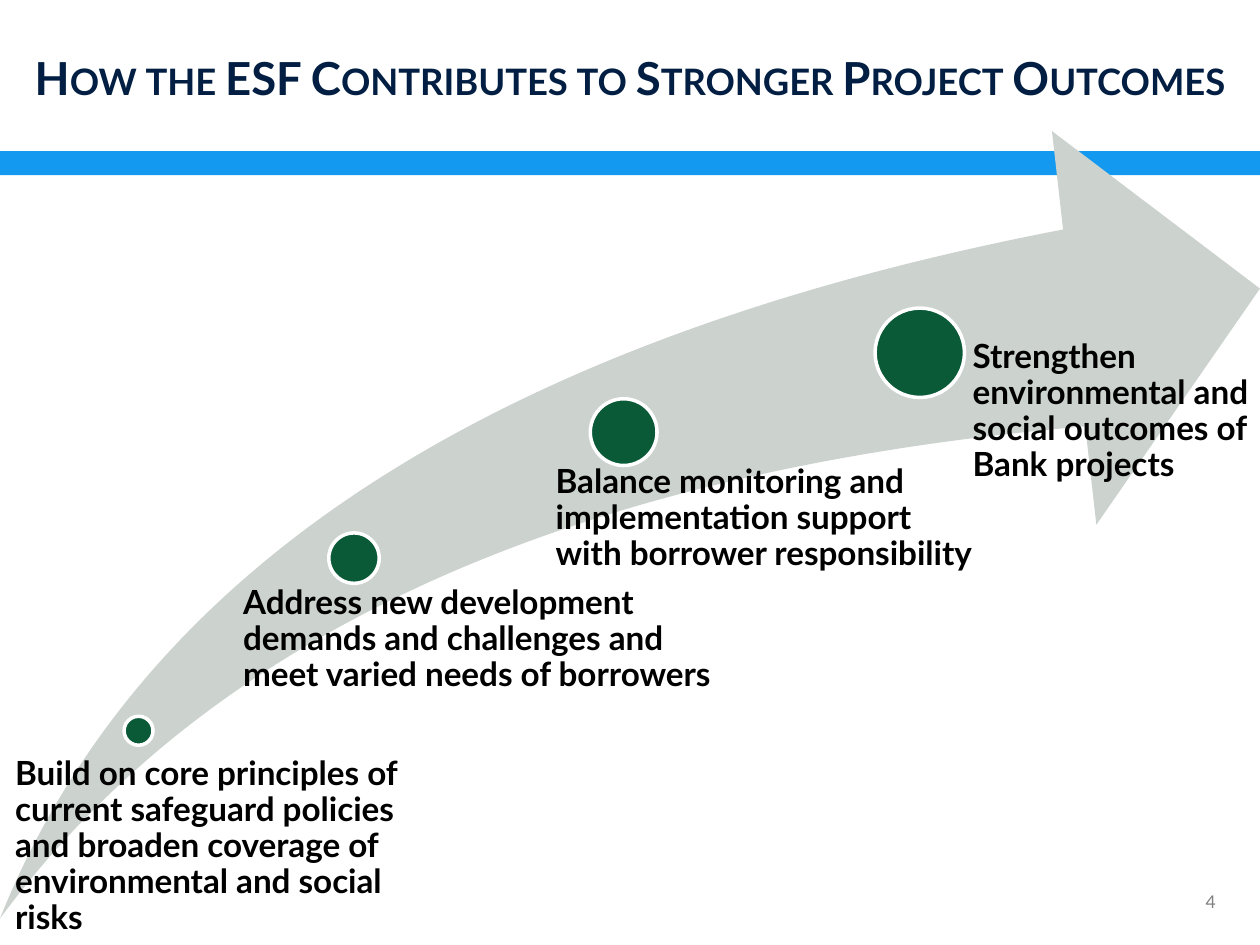
from pptx import Presentation
from pptx.dml.color import RGBColor
from pptx.enum.shapes import MSO_SHAPE
from pptx.enum.text import MSO_ANCHOR, MSO_AUTO_SIZE, PP_ALIGN
from pptx.util import Inches, Pt

RECTANGLE = MSO_SHAPE.RECTANGLE
OVAL = MSO_SHAPE.OVAL
SWOOSH_ARROW = MSO_SHAPE.SWOOSH_ARROW
TOP, MIDDLE, BOTTOM = MSO_ANCHOR.TOP, MSO_ANCHOR.MIDDLE, MSO_ANCHOR.BOTTOM
LEFT, CENTER, RIGHT = PP_ALIGN.LEFT, PP_ALIGN.CENTER, PP_ALIGN.RIGHT
NO_AUTOFIT = MSO_AUTO_SIZE.NONE

BLUE = RGBColor(0x13, 0x9A, 0xF0)
SILVER = RGBColor(0xCC, 0xD2, 0xCE)
GREEN = RGBColor(0x0B, 0x5A, 0x37)
NAVY = RGBColor(0x02, 0x1F, 0x43)
GREY = RGBColor(0x7F, 0x7F, 0x7F)
BLACK = RGBColor(0, 0, 0)
WHITE = RGBColor(0xFF, 0xFF, 0xFF)

TITLE_FONT = {"name": "Lato", "size": Pt(26), "bold": True}
STEP_FONT = {"name": "Lato", "size": Pt(19), "bold": True}
NUMBER_FONT = {"name": "Lato", "size": Pt(10), "bold": False}

# centre x, centre y and diameter of the dot; label box; label indent; label
STEPS = [
    ((1.1, 5.8, 0.23), (0, 6.01, 3.61, 1.49), 0.12,
     "Build on core principles of current safeguard policies "
     "and broaden coverage of environmental and social risks"),
    ((2.81, 4.43, 0.4), (1.72, 4.65, 4.02, 1.35), 0.21,
     "Address new development demands and challenges and "
     "meet varied needs of borrowers"),
    ((4.95, 3.43, 0.53), (4.13, 3.69, 3.72, 1.45), 0.28,
     "Balance monitoring and implementation support\n"
     "with borrower responsibility"),
    ((7.3, 2.8, 0.71), (7.34, 2.7, 2.66, 1.4), 0.38,
     "Strengthen environmental and social outcomes of Bank projects"),
]


def set_attributes(target, values):
    for name, value in values.items():
        setattr(target, name, value)


def to_inches(box):
    return [Inches(length) for length in box]


def add_filled(slide, kind, box, color):
    shape = slide.shapes.add_shape(kind, *to_inches(box))
    shape.shadow.inherit = False
    shape.fill.solid()
    shape.fill.fore_color.rgb = color
    shape.line.fill.background()
    return shape


def write_text(holder, text, font, color, align=LEFT, anchor=TOP,
               indent=0, spacing=1.0):
    frame = holder.text_frame
    set_attributes(frame, {
        "word_wrap": True, "auto_size": NO_AUTOFIT, "vertical_anchor": anchor,
        "margin_left": Inches(indent), "margin_top": 0,
        "margin_right": 0, "margin_bottom": 0,
    })
    paragraph = frame.paragraphs[0]
    paragraph.text = text
    set_attributes(paragraph, {"alignment": align, "line_spacing": spacing})
    for run in paragraph.runs:
        set_attributes(run.font, font)
        run.font.color.rgb = color
    return paragraph


def place_title(slide, box):
    title = slide.shapes.title
    set_attributes(title, dict(zip(("left", "top", "width", "height"),
                                   to_inches(box))))
    heading = write_text(title,
                         "How the ESF Contributes to Stronger Project Outcomes",
                         TITLE_FONT, NAVY, CENTER, BOTTOM)
    for run in heading.runs:
        run.font._element.set("cap", "small")


def place_step(slide, dot, label_box, indent, label):
    center_x, center_y, diameter = dot
    marker = add_filled(slide, OVAL,
                        (center_x - diameter / 2, center_y - diameter / 2,
                         diameter, diameter), GREEN)
    marker.line.color.rgb = WHITE
    marker.line.width = Pt(2)
    caption = slide.shapes.add_textbox(*to_inches(label_box))
    write_text(caption, label, STEP_FONT, BLACK, indent=indent, spacing=0.9)


def place_path(slide, box):
    arrow = add_filled(slide, SWOOSH_ARROW, box, SILVER)
    arrow.adjustments[0] = 0.25
    arrow.adjustments[1] = 0.25
    for step in STEPS:
        place_step(slide, *step)


def place_number(slide, box):
    number = slide.shapes.add_textbox(*to_inches(box))
    write_text(number, "4", NUMBER_FONT, GREY, RIGHT, MIDDLE)


def main():
    presentation = Presentation()
    presentation.slide_width = Inches(10)
    presentation.slide_height = Inches(7.5)
    slide = presentation.slides.add_slide(presentation.slide_layouts[5])
    add_filled(slide, RECTANGLE, (0, 1.2, 10, 0.19), BLUE)
    place_path(slide, (0, 1.04, 10, 6.25))
    place_title(slide, (0.23, 0.21, 9.54, 0.62))
    place_number(slide, (9.05, 6.96, 0.6, 0.39))
    presentation.save("out.pptx")


if __name__ == "__main__":
    main()
